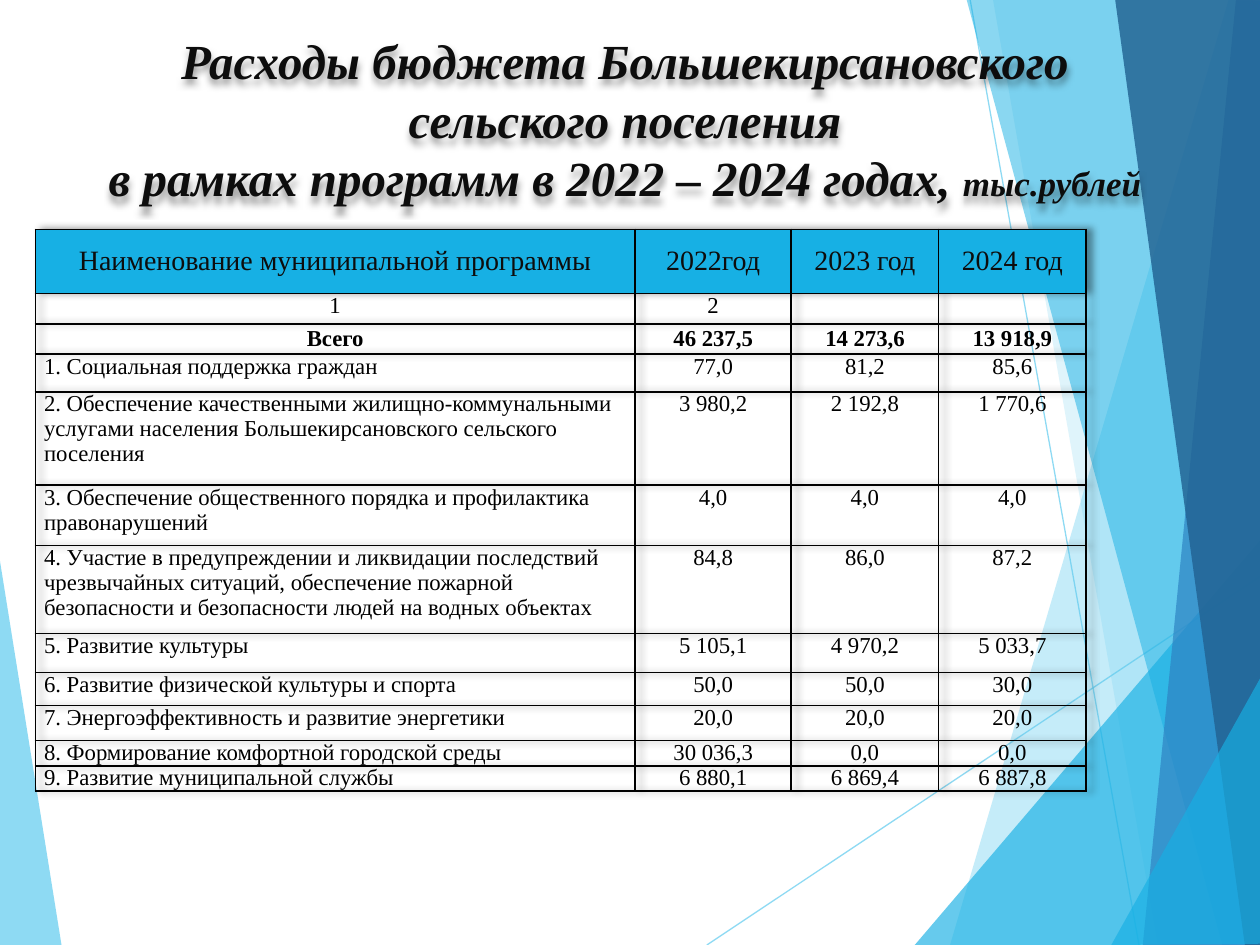
"""Build the slide on municipal programme spending in 2022–2024."""
from lxml import etree
from pptx import Presentation
from pptx import util as u
from pptx.dml.color import RGBColor
from pptx.enum import shapes, text
from pptx.oxml import parse_xml
from pptx.oxml.ns import nsdecls, qn

FONT = "Times New Roman"
BLACK = RGBColor(0x00, 0x00, 0x00)
INK = RGBColor(0x0D, 0x0D, 0x0D)
SKY = RGBColor(0x5F, 0xCB, 0xEF)
AZURE = RGBColor(0x17, 0xB0, 0xE4)
BLUE = RGBColor(0x2E, 0x83, 0xC3)
NAVY = RGBColor(0x22, 0x62, 0x92)

LEFT_FACET = ([(-0.01, 4.39), (0.49, 7.51), (-0.01, 7.5)], SKY, 70)
RAYS = [((5.61, 7.5), (10.01, 4.57)), ((7.7, 0), (9.04, 7.5))]
RIGHT_FACETS = [
    ([(9.75, 0), (7.54, 7.5), (10.02, 7.51), (10.01, 0.01)], SKY, 36),
    ([(7.88, -0.01), (9.19, 7.5), (10.01, 7.5), (10.01, -0.01)], SKY, 20),
    ([(7.26, 7.5), (10, 4.29), (10.01, 7.5)], AZURE, 66),
    ([(7.67, -0.01), (9.7, 7.5), (10.01, 7.49), (10.01, -0.01)], AZURE, 50),
    ([(9.81, -0.01), (9.07, 7.5), (10.01, 7.5), (10, -0.01)], BLUE, 70),
    ([(8.85, -0.01), (9.88, 7.5), (10.02, 7.5), (10, -0.01)], NAVY, 82),
    ([(8.82, 7.5), (10.02, 5.35), (10.02, 7.49)], AZURE, 66),
]

COLUMN_WIDTHS = [4.76, 1.24, 1.17, 1.17]
PROGRAMMES = [
    (0.51, "Наименование муниципальной программы", "2022год", "2023 год", "2024 год"),
    (0.24, "1", "2", "", ""),
    (0.24, "Всего", "46 237,5", "14 273,6", "13 918,9"),
    (0.3, "1. Социальная поддержка граждан", "77,0", "81,2", "85,6"),
    (0.74, "2. Обеспечение качественными жилищно-коммунальными услугами "
     "населения Большекирсановского сельского поселения",
     "3 980,2", "2 192,8", "1 770,6"),
    (0.48, "3. Обеспечение общественного порядка и профилактика правонарушений",
     "4,0", "4,0", "4,0"),
    (0.7, "4. Участие в предупреждении и ликвидации последствий чрезвычайных ситуаций, "
     "обеспечение пожарной безопасности и безопасности людей на водных объектах",
     "84,8", "86,0", "87,2"),
    (0.31, "5. Развитие культуры", "5 105,1", "4 970,2", "5 033,7"),
    (0.26, "6. Развитие физической культуры и спорта", "50,0", "50,0", "30,0"),
    (0.28, "7. Энергоэффективность и развитие энергетики", "20,0", "20,0", "20,0"),
    (0.16, "8. Формирование комфортной городской среды", "30 036,3", "0,0", "0,0"),
    (0.16, "9. Развитие муниципальной службы", "6 880,1", "6 869,4", "6 887,8"),
]
HEADER, NUMBERING, TOTAL = range(3)


def set_opacity(fill_parent, percent):
    """Make the solid colour inside an element partly transparent."""
    colour = next(fill_parent.iter(qn("a:srgbClr")))
    etree.SubElement(colour, qn("a:alpha"), val=str(percent * 1000))


def soft_shadow(angle):
    """Return an effect list with one blurred outer shadow."""
    return parse_xml(
        f'<a:effectLst {nsdecls("a")}><a:outerShdw blurRad="50800" dist="38100" '
        f'dir="{angle * 60000}" algn="tl" rotWithShape="0"><a:srgbClr val="000000">'
        '<a:alpha val="40000"/></a:srgbClr></a:outerShdw></a:effectLst>')


def add_facet(slide, points, colour, opacity):
    """Draw one translucent background polygon."""
    corners = [(u.Inches(x), u.Inches(y)) for x, y in points]
    builder = slide.shapes.build_freeform(*corners[0])
    builder.add_line_segments(corners[1:], close=True)
    facet = builder.convert_to_shape()
    facet.shadow.inherit = False
    facet.fill.solid()
    facet.fill.fore_color.rgb = colour
    set_opacity(facet.fill._xPr, opacity)
    facet.line.fill.background()


def add_ray(slide, start, end):
    """Draw one thin translucent background line."""
    ray = slide.shapes.add_connector(
        shapes.MSO_CONNECTOR.STRAIGHT, *(u.Inches(value) for value in start + end))
    ray.line.color.rgb = SKY
    ray.line.width = u.Pt(0.75)
    set_opacity(ray.line._ln, 70)
    etree.SubElement(ray._element.spPr, qn("a:effectLst"))


def add_run(paragraph, words, size, colour, bold=False, italic=False):
    """Append one formatted run to a paragraph."""
    run = paragraph.add_run()
    run.text = words
    font = run.font
    font.name, font.size, font.bold, font.italic = FONT, u.Pt(size), bold, italic
    font.color.rgb = colour


def fill_title(slide):
    """Place and write the slide title."""
    title = slide.shapes.title
    title.left, title.top = u.Inches(0.31), u.Inches(0.16)
    title.width, title.height = u.Inches(9.3), u.Inches(1.25)
    title._element.spPr.append(soft_shadow(90))
    frame = title.text_frame
    frame.word_wrap = True
    frame.auto_size = text.MSO_AUTO_SIZE.NONE
    frame.vertical_anchor = text.MSO_ANCHOR.TOP
    frame.margin_top = u.Inches(0.08)
    heading = frame.paragraphs[0]
    heading.alignment = text.PP_ALIGN.CENTER
    for line in ("Расходы бюджета Большекирсановского", "сельского поселения"):
        add_run(heading, line, 28, INK, bold=True, italic=True)
        heading.add_line_break()
    add_run(heading, "в рамках программ в 2022 – 2024 годах, ", 28, INK, bold=True, italic=True)
    add_run(heading, "тыс.рублей", 20, INK, bold=True, italic=True)


def add_borders(cell):
    """Outline a cell with thin black lines."""
    properties = cell._tc.get_or_add_tcPr()
    for position, side in enumerate(("lnL", "lnR", "lnT", "lnB")):
        properties.insert(position, parse_xml(
            f'<a:{side} {nsdecls("a")} w="12700"><a:solidFill>'
            f'<a:srgbClr val="{BLACK}"/></a:solidFill></a:{side}>'))


def fill_cell(cell, words, row, column):
    """Write and format one table cell."""
    cell.margin_left = cell.margin_right = u.Inches(0.07)
    cell.margin_top = cell.margin_bottom = 0
    if row == HEADER:
        cell.fill.solid()
        cell.fill.fore_color.rgb = AZURE
    else:
        cell.fill.background()
    add_borders(cell)
    centred_row = row in (HEADER, TOTAL)
    cell.vertical_anchor = text.MSO_ANCHOR.MIDDLE if centred_row else text.MSO_ANCHOR.TOP
    paragraph = cell.text_frame.paragraphs[0]
    programme_name = column == 0 and row > TOTAL
    paragraph.alignment = text.PP_ALIGN.LEFT if programme_name else text.PP_ALIGN.CENTER
    if words:
        size, colour = (16, INK) if row == HEADER else (13, BLACK)
        add_run(paragraph, words, size, colour, bold=row == TOTAL)
    else:
        etree.SubElement(paragraph._p, qn("a:endParaRPr"), sz="1300")


def add_spending_table(slide):
    """Add the table of spending by programme and year."""
    table = slide.shapes.add_table(
        len(PROGRAMMES), len(COLUMN_WIDTHS), u.Inches(0.28), u.Inches(1.82),
        u.Inches(sum(COLUMN_WIDTHS)), u.Inches(sum(row[0] for row in PROGRAMMES))).table
    table.first_row = table.horz_banding = False
    table._tbl.tblPr.insert(0, soft_shadow(0))
    for column, width in zip(table.columns, COLUMN_WIDTHS):
        column.width = u.Inches(width)
    for row, (height, *entries) in enumerate(PROGRAMMES):
        table.rows[row].height = u.Inches(height)
        for column, words in enumerate(entries):
            fill_cell(table.cell(row, column), words, row, column)


def main():
    """Build and save the presentation."""
    deck = Presentation()
    deck.slide_width, deck.slide_height = u.Inches(10), u.Inches(7.5)
    slide = deck.slides.add_slide(deck.slide_layouts[5])
    add_facet(slide, *LEFT_FACET)
    for start, end in RAYS:
        add_ray(slide, start, end)
    for facet in RIGHT_FACETS:
        add_facet(slide, *facet)
    fill_title(slide)
    title = slide.shapes.title._element
    title.getparent().append(title)
    add_spending_table(slide)
    deck.save("out.pptx")


if __name__ == "__main__":
    main()
